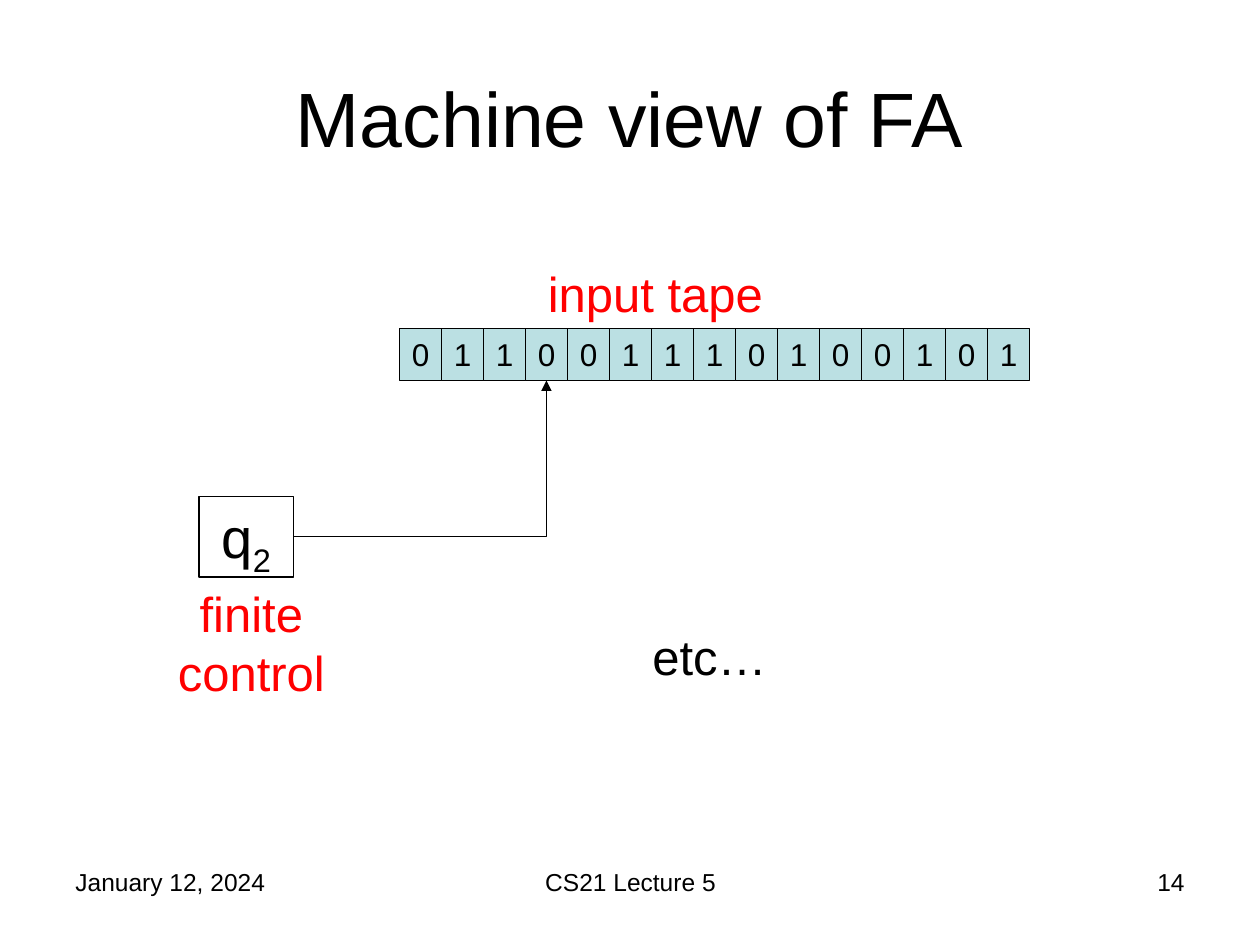
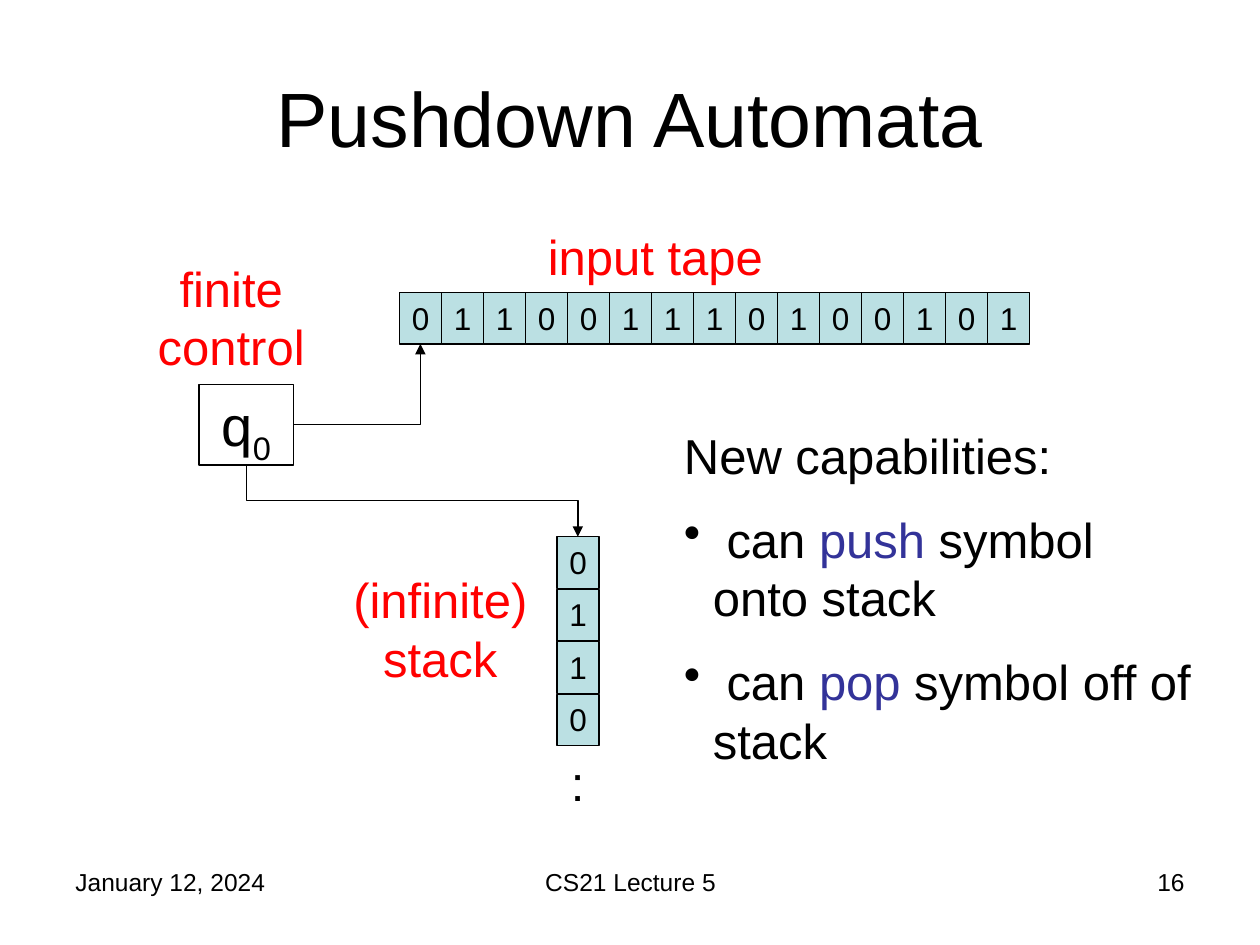
from lxml import etree
from pptx import Presentation
from pptx.dml.color import RGBColor
from pptx.enum import shapes, text
from pptx.oxml import ns
from pptx.util import Inches, Pt

BLACK, RED, INDIGO, AQUA = "000000", "FF0000", "333399", "BBE0E3"
FONT = "Arial"
LEFT, CENTER, RIGHT = text.PP_ALIGN.LEFT, text.PP_ALIGN.CENTER, text.PP_ALIGN.RIGHT

TITLE_AREA = (0.5, 0.3, 9, 1.25)
FOOTER_TOP, FOOTER_HEIGHT = 6.83, 0.52
TAPE = "011001110100101"
TAPE_LEFT = 3.17
CELL_WIDTH, CELL_HEIGHT = 1 / 3, 0.41
STACK_LEFT, STACK_TOP, STACK_STEP = 4.42, 4.26, 5 / 12
CONTROL_LEFT, CONTROL_WIDTH, CONTROL_HEIGHT = 1.58, 0.75, 0.64
HANGING = 0.23

MACHINES = [
    {
        "title": "Machine view of FA",
        "number": "14",
        "tape_top": 2.61,
        "control_top": 3.94,
        "state": "2",
        "head": 3,
        "stack": "",
        "labels": [
            ("input tape", (4.25, 2.04, 2.33, 0.57), LEFT, RED),
            ("finite control", (1.08, 4.58, 1.83, 1.03), CENTER, RED),
            ("etc…", (5.08, 4.92, 2.5, 0.57), LEFT, BLACK),
        ],
        "capabilities": [],
    },
    {
        "title": "Pushdown Automata",
        "number": "16",
        "tape_top": 2.32,
        "control_top": 3.05,
        "state": "0",
        "head": 0,
        "stack": "0110",
        "labels": [
            ("input tape", (4.25, 1.75, 2.33, 0.57), LEFT, RED),
            ("finite control", (0.92, 2, 1.83, 1.03), CENTER, RED),
            ("(infinite) stack", (2.58, 4.47, 1.83, 1.03), CENTER, RED),
            (":", (4.42, 5.92, 0.33, 0.57), CENTER, BLACK),
        ],
        "capabilities": [
            [("New capabilities:", BLACK)],
            [(" can ", BLACK), ("push", INDIGO), (" symbol onto stack", BLACK)],
            [(" can ", BLACK), ("pop", INDIGO), (" symbol off of stack", BLACK)],
        ],
    },
]
CAPABILITIES_AREA = (5.33, 3.33, 4.25, 2.9)


def color(value):
    return RGBColor.from_string(value)


def apply(target, values):
    for name, value in values.items():
        setattr(target, name, value)


def add_xml(parent, tag, **attributes):
    return etree.SubElement(parent, ns.qn(tag), attributes)


def inches(area):
    return [Inches(value) for value in area]


def write_run(paragraph, words, size, hue=BLACK):
    run = paragraph.add_run()
    run.text = words
    apply(run.font, {"name": FONT, "size": Pt(size)})
    run.font.color.rgb = color(hue)
    return run


def space_half(paragraph):
    before = add_xml(paragraph._p.get_or_add_pPr(), "a:spcBef")
    add_xml(before, "a:spcPct", val="50000")


def add_text(slide, area, words, size, align=LEFT, hue=BLACK, spaced=True):
    frame = slide.shapes.add_textbox(*inches(area)).text_frame
    frame.word_wrap = True
    paragraph = frame.paragraphs[0]
    paragraph.alignment = align
    if spaced:
        frame.auto_size = text.MSO_AUTO_SIZE.SHAPE_TO_FIT_TEXT
        space_half(paragraph)
    write_run(paragraph, words, size, hue)


def add_box(slide, area, words, size, fill=None):
    box = slide.shapes.add_shape(shapes.MSO_SHAPE.RECTANGLE, *inches(area))
    box.shadow.inherit = False
    if fill:
        box.fill.solid()
        box.fill.fore_color.rgb = color(fill)
    else:
        box.fill.background()
    box.line.color.rgb = color(BLACK)
    box.line.width = Pt(0.75)
    apply(box.text_frame, {
        "word_wrap": True,
        "auto_size": text.MSO_AUTO_SIZE.SHAPE_TO_FIT_TEXT,
        "vertical_anchor": text.MSO_ANCHOR.TOP,
    })
    paragraph = box.text_frame.paragraphs[0]
    paragraph.alignment = CENTER
    space_half(paragraph)
    write_run(paragraph, words, size)
    return paragraph


def add_elbow(slide, begin, end):
    arrow = slide.shapes.add_connector(
        shapes.MSO_CONNECTOR.ELBOW, *inches(begin + end))
    arrow.line.color.rgb = color(BLACK)
    arrow.line.width = Pt(0.75)
    add_xml(arrow.line._get_or_add_ln(), "a:tailEnd", type="triangle")
    add_xml(arrow._element.spPr, "a:effectLst")
    return arrow._element.spPr


def add_tape_arrow(slide, begin, end):
    properties = add_elbow(slide, begin, end)
    properties.find(ns.qn("a:prstGeom")).set("prst", "bentConnector2")


def add_stack_arrow(slide, begin, end):
    middle_x, middle_y = (begin[0] + end[0]) / 2, (begin[1] + end[1]) / 2
    half_x, half_y = (end[1] - begin[1]) / 2, (end[0] - begin[0]) / 2
    properties = add_elbow(slide, (middle_x + half_x, middle_y - half_y),
                           (middle_x - half_x, middle_y + half_y))
    properties.find(ns.qn("a:xfrm")).set("rot", str(270 * 60000))


def add_capabilities(slide, lines):
    frame = slide.shapes.add_textbox(*inches(CAPABILITIES_AREA)).text_frame
    apply(frame, {"word_wrap": True,
                  "auto_size": text.MSO_AUTO_SIZE.SHAPE_TO_FIT_TEXT})
    for index, runs in enumerate(lines):
        paragraph = frame.add_paragraph() if index else frame.paragraphs[0]
        space_half(paragraph)
        layout = paragraph._p.get_or_add_pPr()
        layout.set("marL", str(Inches(HANGING)))
        layout.set("indent", str(-Inches(HANGING)))
        if index:
            add_xml(layout, "a:buChar", char="•")
        for words, hue in runs:
            write_run(paragraph, words, 28, hue)


def add_frame(slide, machine):
    footers = [
        (0.5, 2.33, "January 12, 2024", LEFT),
        (3.42, 3.17, "CS21 Lecture 5", CENTER),
        (7.17, 2.33, machine["number"], RIGHT),
    ]
    for left, width, words, align in footers:
        add_text(slide, (left, FOOTER_TOP, width, FOOTER_HEIGHT), words, 14,
                 align, spaced=False)
    title = slide.shapes.title
    apply(title, dict(zip(("left", "top", "width", "height"), inches(TITLE_AREA))))
    title.text_frame.vertical_anchor = text.MSO_ANCHOR.MIDDLE
    heading = title.text_frame.paragraphs[0]
    heading.alignment = CENTER
    write_run(heading, machine["title"], 44)


def build_machine(slide, machine):
    add_frame(slide, machine)
    tape_top, control_top = machine["tape_top"], machine["control_top"]
    for index, symbol in enumerate(TAPE):
        left = TAPE_LEFT + index * CELL_WIDTH
        add_box(slide, (left, tape_top, CELL_WIDTH, CELL_HEIGHT), symbol, 18, AQUA)
    state = add_box(
        slide, (CONTROL_LEFT, control_top, CONTROL_WIDTH, CONTROL_HEIGHT), "q", 32)
    subscript = write_run(state, machine["state"], 32)
    subscript.font._element.set("baseline", "-25000")
    for words, area, align, hue in machine["labels"]:
        add_text(slide, area, words, 28, align, hue)
    add_tape_arrow(
        slide,
        (CONTROL_LEFT + CONTROL_WIDTH, control_top + CONTROL_HEIGHT / 2),
        (TAPE_LEFT + (machine["head"] + 0.5) * CELL_WIDTH, tape_top + CELL_HEIGHT))
    for index, symbol in enumerate(machine["stack"]):
        top = STACK_TOP + index * STACK_STEP
        add_box(slide, (STACK_LEFT, top, CELL_WIDTH, CELL_HEIGHT), symbol, 18, AQUA)
    if machine["stack"]:
        add_stack_arrow(
            slide,
            (CONTROL_LEFT + CONTROL_WIDTH / 2, control_top + CONTROL_HEIGHT),
            (STACK_LEFT + CELL_WIDTH / 2, STACK_TOP))
    if machine["capabilities"]:
        add_capabilities(slide, machine["capabilities"])


def main():
    deck = Presentation()
    apply(deck, {"slide_width": Inches(10), "slide_height": Inches(7.5)})
    for machine in MACHINES:
        build_machine(deck.slides.add_slide(deck.slide_layouts[5]), machine)
    deck.save("out.pptx")


if __name__ == "__main__":
    main()
